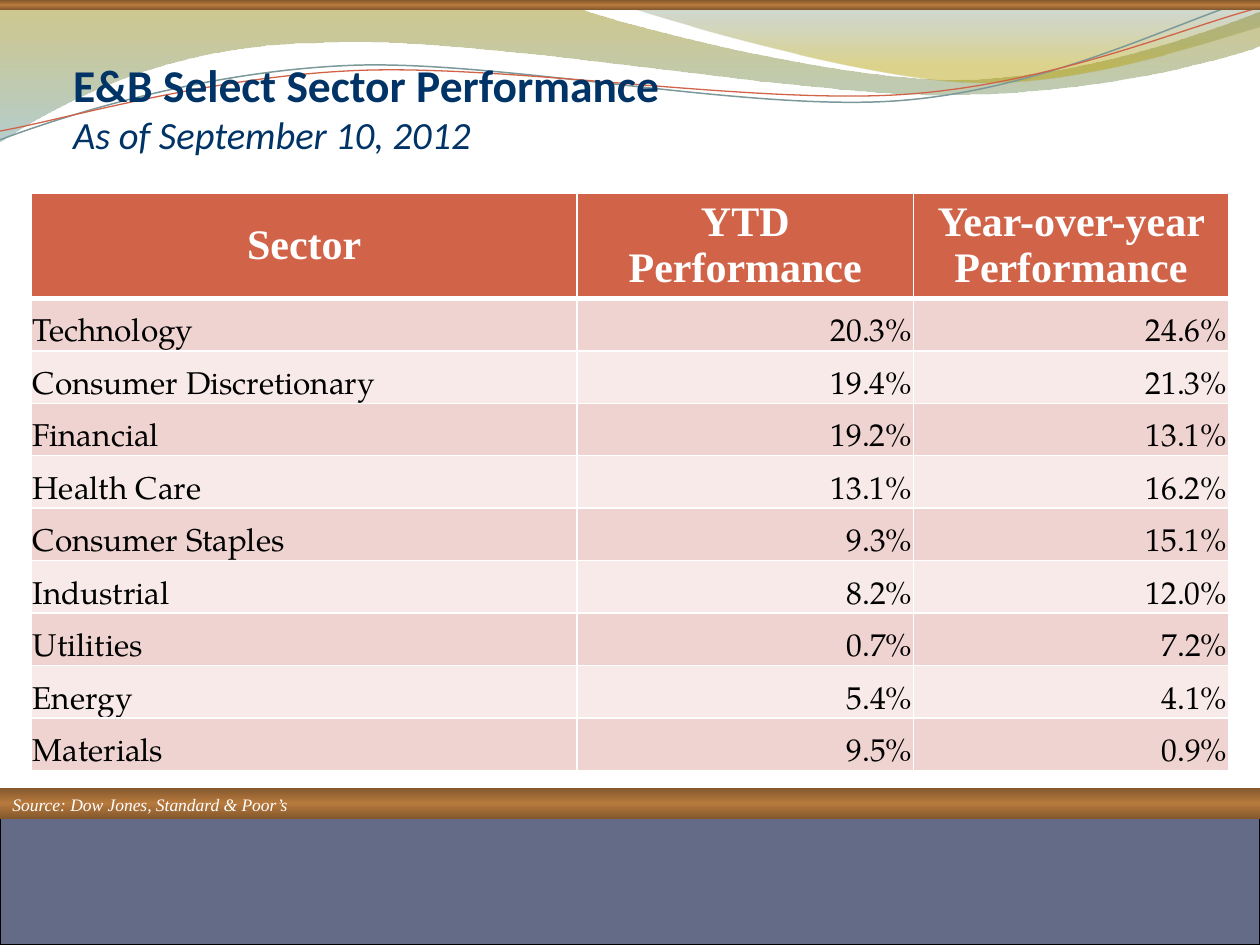
from lxml.etree import SubElement, fromstring
from pptx import Presentation
from pptx.dml.color import RGBColor
from pptx.enum.shapes import MSO_SHAPE
from pptx.enum.text import MSO_ANCHOR, MSO_AUTO_SIZE, PP_ALIGN
from pptx.oxml.ns import nsdecls, qn
from pptx.util import Inches, Pt

COLORS = {
    "navy": "003366", "white": "FFFFFF", "black": "000000", "slate": "646B86",
    "rust": "D16349", "teal": "7C999A", "band_dark": "EED3D0", "band_light": "F7EAE9",
}
SERIF, BODY, TITLE = "Times New Roman", "TeX Gyre Pagella", "Calibri"
WIDTH, HEIGHT = 10, 7.5

HEADERS = ["Sector", "YTD Performance", "Year-over-year Performance"]
SECTORS = [
    ("Technology", "20.3%", "24.6%"),
    ("Consumer Discretionary", "19.4%", "21.3%"),
    ("Financial", "19.2%", "13.1%"),
    ("Health Care", "13.1%", "16.2%"),
    ("Consumer Staples", "9.3%", "15.1%"),
    ("Industrial", "8.2%", "12.0%"),
    ("Utilities", "0.7%", "7.2%"),
    ("Energy", "5.4%", "4.1%"),
    ("Materials", "9.5%", "0.9%"),
]
COLUMN_WIDTHS = [4.33, 2.67, 2.5]
TABLE_HEIGHT, HEADER_HEIGHT = 4.47, 0.72
ROW_HEIGHT = (TABLE_HEIGHT - HEADER_HEIGHT) / len(SECTORS)

# Gradient stops: position %, colour, opacity %
BRONZE = [(0, "83572C", 100), (50, "B77A3D", 100), (100, "83572C", 100)]
OLIVE_TO_TEAL = [(0, "978500", 45), (100, "77A5A6", 55)]
TEAL_TO_GOLD = [(0, "648484", 30), (80, "B49F00", 45)]

# Outlines: two numbers are a straight step, six a cubic curve
WAVES = [
    ([(0, -0.01), (4.4, -0.01), (4.76, 0.17, 6.64, 0.63, 7.58, 0.63),
      (8.53, 0.63, 9.58, 0.26, 10, 0.09), (10.01, 0.36),
      (9.83, 0.44, 8.7, 0.76, 7.46, 0.75), (6.22, 0.75, 3.82, 0.28, 2.57, 0.34),
      (1.29, 0.35, 0.46, 0.83, -0.01, 1.13)], OLIVE_TO_TEAL),
    ([(4.79, -0.01), (5.09, 0.11, 6.82, 0.62, 7.69, 0.65),
      (8.56, 0.69, 9.61, 0.32, 10, 0.21), (10, 0)], TEAL_TO_GOLD),
]
STRANDS = [
    ([(0, 1.11), (0.48, 0.93, 1.58, 0.57, 2.77, 0.52),
      (3.95, 0.47, 5.93, 0.89, 7.13, 0.8), (8.33, 0.71, 9.38, 0.15, 9.98, -0.02)],
     "teal", 0.85),
    ([(0, 1.04), (0.47, 0.96, 1.64, 0.61, 2.83, 0.56),
      (4.03, 0.51, 5.97, 0.83, 7.17, 0.75), (8.36, 0.67, 9.41, 0.21, 10, 0.06)],
     "rust", 0.75),
]


def rgb(name):
    return RGBColor.from_string(COLORS[name])


def add_outline(shapes, outline, close):
    """Build the outline through its end points, then bend the cubic steps."""
    anchors = [(Inches(step[-2]), Inches(step[-1])) for step in outline]
    builder = shapes.build_freeform(*anchors[0])
    builder.add_line_segments(anchors[1:], close=close)
    shape = builder.convert_to_shape()
    shape.shadow.inherit = False
    shape.fill.background()
    segments = list(shape._element.iter(qn("a:lnTo")))
    for step, segment in zip(outline[1:], segments):
        if len(step) == 6:
            segment.getparent().replace(segment, cubic_segment(step, shape.left, shape.top))
    return shape


def cubic_segment(step, left, top):
    curve = fromstring(f'<a:cubicBezTo {nsdecls("a")}/>')
    for x, y in zip(step[::2], step[1::2]):
        SubElement(curve, qn("a:pt"), x=str(Inches(x) - left), y=str(Inches(y) - top))
    return curve


def add_bar(shapes, top, height):
    bar = shapes.add_shape(MSO_SHAPE.RECTANGLE, 0, Inches(top), Inches(WIDTH), Inches(height))
    bar.shadow.inherit = False
    return bar


def fill_downward(shape, stops):
    """Fill with a top-to-bottom gradient and no outline."""
    shape.fill.background()
    shape.line.fill.background()
    stop_xml = "".join(
        f'<a:gs pos="{position * 1000}"><a:srgbClr val="{color}">'
        f'<a:alpha val="{opacity * 1000}"/></a:srgbClr></a:gs>'
        for position, color, opacity in stops)
    gradient = fromstring(
        f'<a:gradFill {nsdecls("a")} rotWithShape="1"><a:gsLst>{stop_xml}</a:gsLst>'
        '<a:lin ang="5400000" scaled="0"/></a:gradFill>')
    properties = shape._element.spPr
    properties.replace(properties.find(qn("a:noFill")), gradient)


def add_run(paragraph, text, font, size, color, bold=False, italic=False):
    run = paragraph.add_run()
    run.text = text
    run.font.name, run.font.size = font, Pt(size)
    run.font.bold, run.font.italic = bold, italic
    run.font.color.rgb = rgb(color)


def set_borders(cell, top, bottom):
    properties = cell._tc.get_or_add_tcPr()
    for side, points in (("L", 1), ("R", 1), ("T", top), ("B", bottom)):
        line = SubElement(properties, qn(f"a:ln{side}"), w=str(Pt(points)))
        fill = SubElement(line, qn("a:solidFill"))
        SubElement(fill, qn("a:srgbClr"), val=COLORS["white"])


def add_backdrop(shapes):
    for outline, stops in WAVES:
        fill_downward(add_outline(shapes, outline, True), stops)
    for outline, color, points in STRANDS:
        strand = add_outline(shapes, outline, False)
        strand.line.color.rgb = rgb(color)
        strand.line.width = Pt(points)
    fill_downward(add_bar(shapes, 0, 0.08), BRONZE)
    footer = add_bar(shapes, 6.42, HEIGHT - 6.42)
    footer.fill.solid()
    footer.fill.fore_color.rgb = rgb("slate")
    footer.line.color.rgb = rgb("black")
    footer.line.width = Pt(0.75)
    fill_downward(add_bar(shapes, 6.25, 0.25), BRONZE)


def add_title(shapes):
    title = shapes.title
    title.left, title.top, title.width, title.height = map(Inches, (0.58, 0.25, 8.5, 1))
    frame = title.text_frame
    frame.auto_size = MSO_AUTO_SIZE.NONE
    frame.vertical_anchor = MSO_ANCHOR.BOTTOM
    frame.margin_left = frame.margin_right = frame.margin_bottom = 0
    paragraph = frame.paragraphs[0]
    paragraph.alignment = PP_ALIGN.LEFT
    add_run(paragraph, "E&B Select Sector Performance", TITLE, 26, "navy", bold=True)
    paragraph.add_line_break()
    add_run(paragraph, "As of September 10, 2012", TITLE, 22, "navy", italic=True)
    title._element.getparent().append(title._element)  # in front of the waves


def add_sector_table(shapes):
    rows = [HEADERS, *SECTORS]
    table = shapes.add_table(len(rows), len(HEADERS), Inches(0.25), Inches(1.53),
                             Inches(sum(COLUMN_WIDTHS)), Inches(TABLE_HEIGHT)).table
    for column, width in zip(table.columns, COLUMN_WIDTHS):
        column.width = Inches(width)
    for r, values in enumerate(rows):
        is_header = r == 0
        table.rows[r].height = Inches(HEADER_HEIGHT if is_header else ROW_HEIGHT)
        for c, value in enumerate(values):
            cell = table.cell(r, c)
            paragraph = cell.text_frame.paragraphs[0]
            set_borders(cell, 3 if r == 1 else 1, 3 if is_header else 1)
            cell.fill.solid()
            if is_header:
                cell.fill.fore_color.rgb = rgb("rust")
                cell.vertical_anchor = MSO_ANCHOR.MIDDLE
                paragraph.alignment = PP_ALIGN.CENTER
                add_run(paragraph, value, SERIF, 24, "white", bold=True)
            else:
                cell.fill.fore_color.rgb = rgb("band_dark" if r % 2 else "band_light")
                cell.vertical_anchor = MSO_ANCHOR.BOTTOM
                cell.margin_left = cell.margin_right = cell.margin_top = Inches(0.01)
                cell.margin_bottom = 0
                paragraph.alignment = PP_ALIGN.RIGHT if c else PP_ALIGN.LEFT
                add_run(paragraph, value, BODY, 18, "black")


def add_source(shapes):
    frame = shapes.add_textbox(0, Inches(6.25), Inches(5.17), Inches(0.27)).text_frame
    frame.word_wrap = True
    add_run(frame.paragraphs[0], "Source: Dow Jones, Standard & Poor’s",
            SERIF, 10, "white", italic=True)


def main():
    presentation = Presentation()
    presentation.slide_width, presentation.slide_height = Inches(WIDTH), Inches(HEIGHT)
    shapes = presentation.slides.add_slide(presentation.slide_layouts[5]).shapes
    for add_part in (add_backdrop, add_title, add_sector_table, add_source):
        add_part(shapes)
    presentation.save("out.pptx")


if __name__ == "__main__":
    main()
